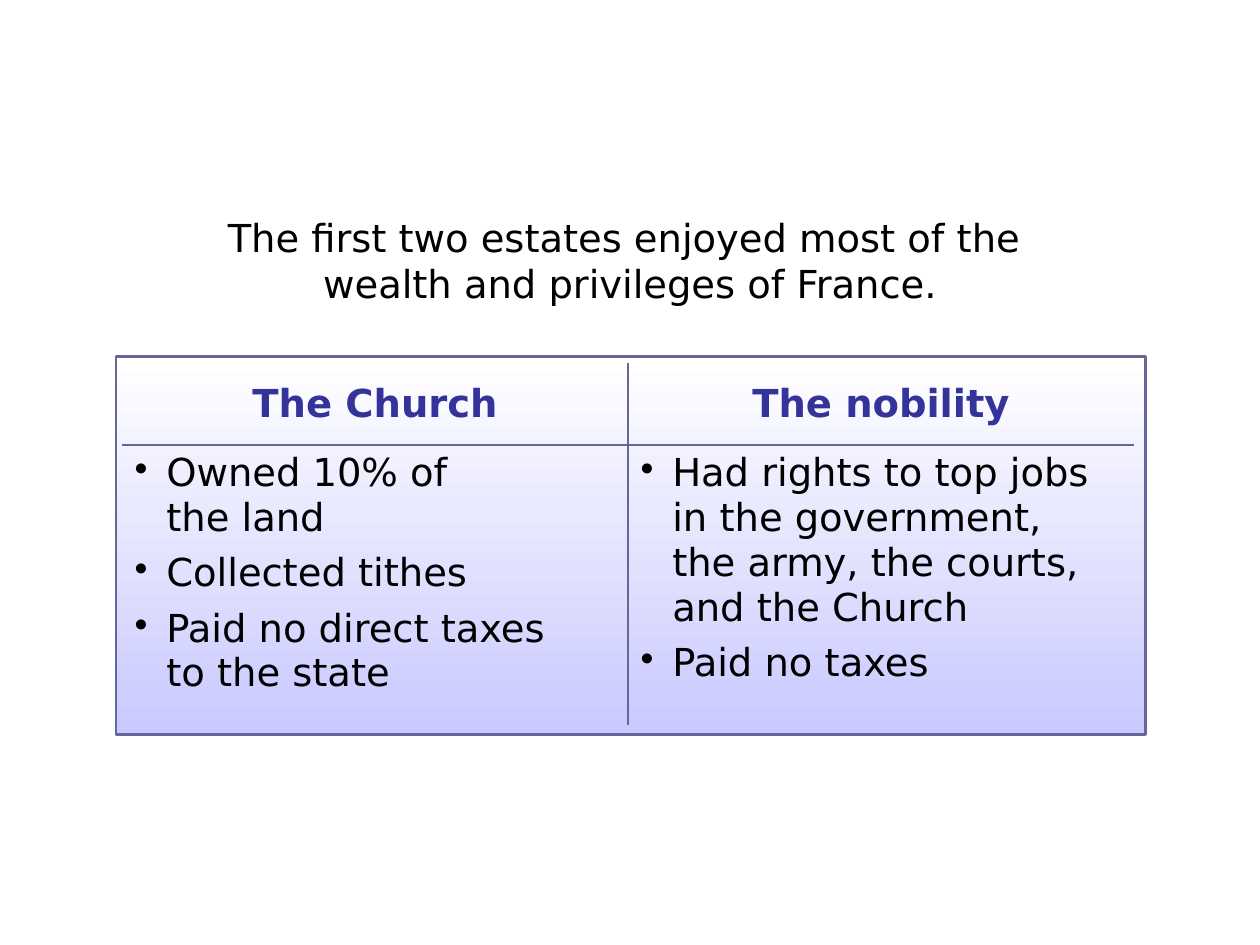
"""Build a slide comparing the privileges of the Church and the nobility."""
import pptx
import pptx.dml.color
import pptx.enum.shapes
import pptx.enum.text
import pptx.oxml
import pptx.oxml.ns
import pptx.util
from pptx.util import Cm

FONT = "DejaVu Sans"
BORDER = "666699"
NAMESPACE = pptx.oxml.ns.nsdecls("a")


def color(value):
    return pptx.dml.color.RGBColor.from_string(value)


def set_font(para, value, bold=False):
    para.font.name = FONT
    para.font.size = pptx.util.Pt(22)
    para.font.bold = bold
    para.font.color.rgb = color(value)


deck = pptx.Presentation()
deck.slide_width = Cm(25.4)
deck.slide_height = Cm(19.05)
page = deck.slides.add_slide(deck.slide_layouts[5])

panel = page.shapes.add_shape(
    pptx.enum.shapes.MSO_SHAPE.RECTANGLE, Cm(2.34), Cm(7.19), Cm(20.75), Cm(7.62)
)
panel.shadow.inherit = False
panel.fill.gradient()
panel.fill.gradient_angle = 270
for stop, value in zip(panel.fill.gradient_stops, ("FFFFFF", "C9C9FF")):
    stop.color.rgb = color(value)
panel.line.color.rgb = color(BORDER)
panel.line.width = pptx.util.Pt(1.5)

estates = {
    "The Church": [
        "Owned 10% of \vthe land",
        "Collected tithes",
        "Paid no direct taxes \vto the state",
    ],
    "The nobility": [
        "Had rights to top jobs \vin the government, \vthe army, the courts, and the Church",
        "Paid no taxes",
    ],
}
table = page.shapes.add_table(2, 2, Cm(2.46), Cm(7.32), Cm(20.4), Cm(7.29)).table
table.first_row = False
table.horz_banding = False
table.rows[0].height = Cm(1.65)
table.rows[1].height = Cm(5.64)

for column, (estate, privileges) in enumerate(estates.items()):
    header = table.cell(0, column)
    header.vertical_anchor = pptx.enum.text.MSO_ANCHOR.MIDDLE
    para = header.text_frame.paragraphs[0]
    para.text = estate
    para.alignment = pptx.enum.text.PP_ALIGN.CENTER
    set_font(para, "333399", bold=True)

    frame = table.cell(1, column).text_frame
    for index, privilege in enumerate(privileges):
        para = frame.add_paragraph() if index else frame.paragraphs[0]
        para.text = privilege
        para.space_after = pptx.util.Pt(6)
        properties = para._p.get_or_add_pPr()
        properties.set("marL", str(Cm(0.64)))
        properties.set("indent", str(-Cm(0.64)))
        properties.append(pptx.oxml.parse_xml(f'<a:buChar {NAMESPACE} char="•"/>'))
        set_font(para, "000000")

    for row in range(2):
        cell = table.cell(row, column)
        inner_sides = ("R" if column == 0 else "L", "B" if row == 0 else "T")
        for side in "LRTB":
            paint = "<a:noFill/>"
            if side in inner_sides:
                paint = f'<a:solidFill><a:srgbClr val="{BORDER}"/></a:solidFill>'
            cell._tc.get_or_add_tcPr().append(pptx.oxml.parse_xml(
                f'<a:ln{side} {NAMESPACE} w="{pptx.util.Pt(1)}">{paint}</a:ln{side}>'
            ))
        cell.fill.background()

title = page.shapes.title
title.left, title.top, title.width, title.height = Cm(1.27), Cm(4.19), Cm(22.86), Cm(1.7)
title.text_frame.auto_size = pptx.enum.text.MSO_AUTO_SIZE.NONE
title.text_frame.vertical_anchor = pptx.enum.text.MSO_ANCHOR.TOP
para = title.text_frame.paragraphs[0]
para.text = "The first two estates enjoyed most of the \vwealth and privileges of France."
para.alignment = pptx.enum.text.PP_ALIGN.CENTER
set_font(para, "000000")

deck.save("out.pptx")
